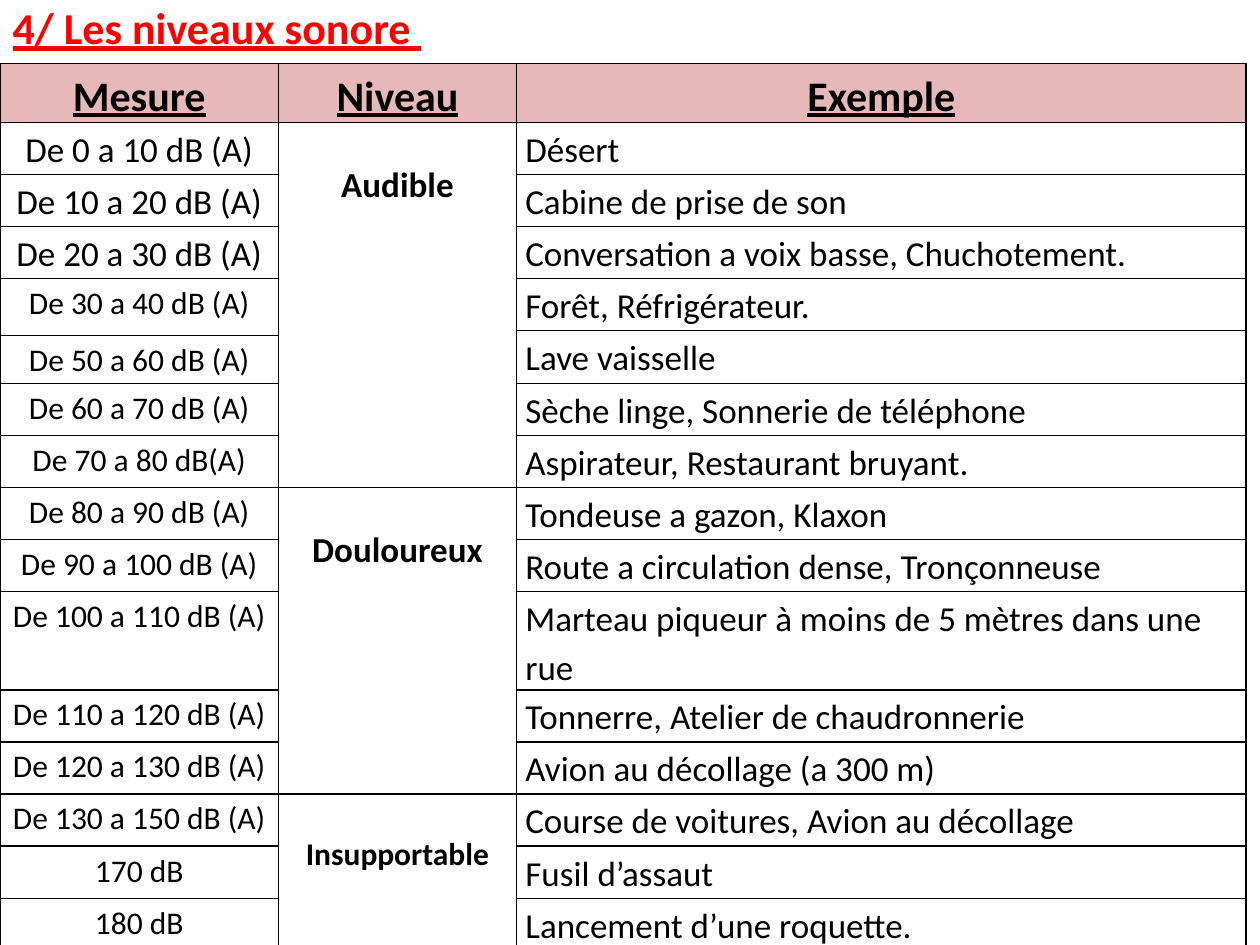
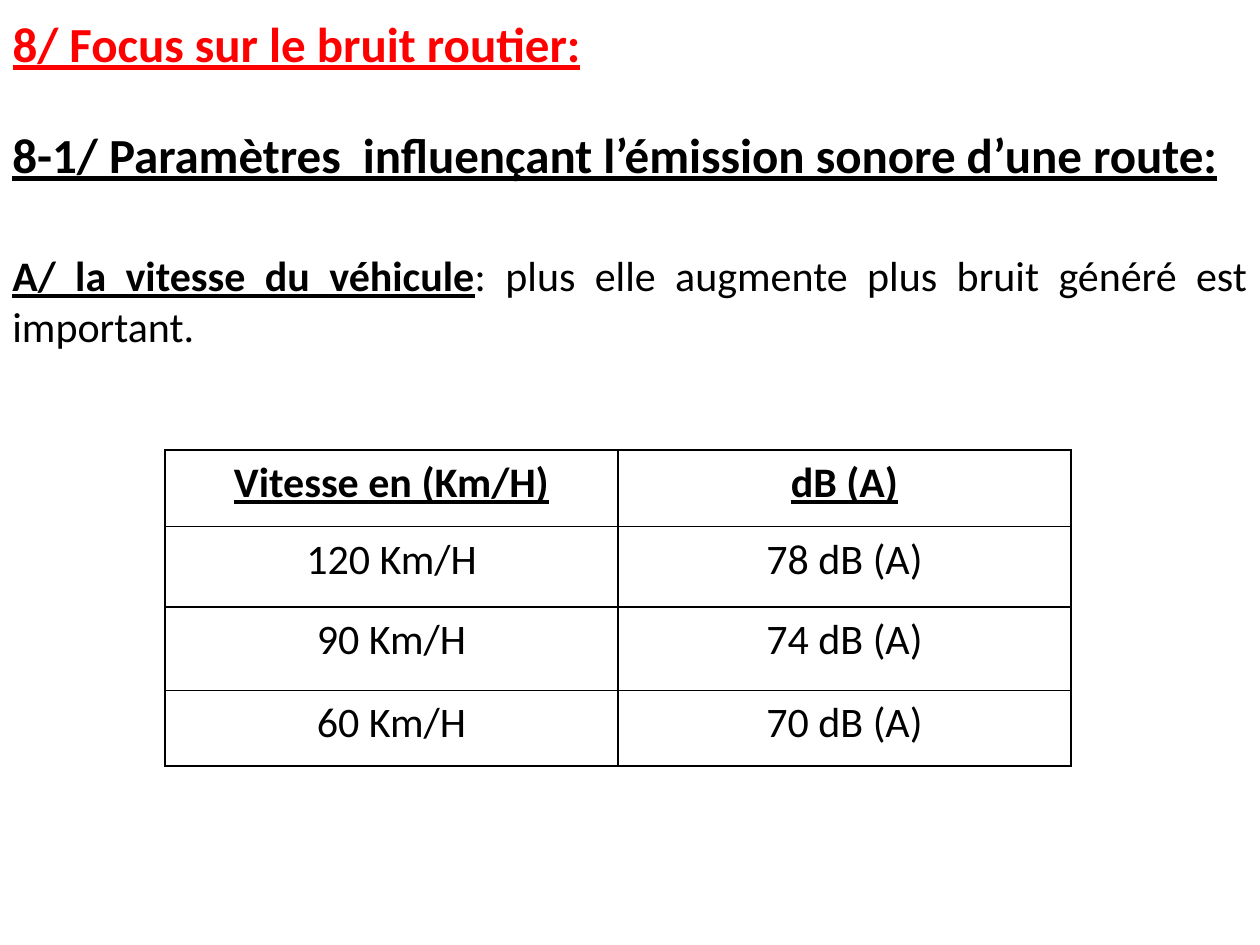
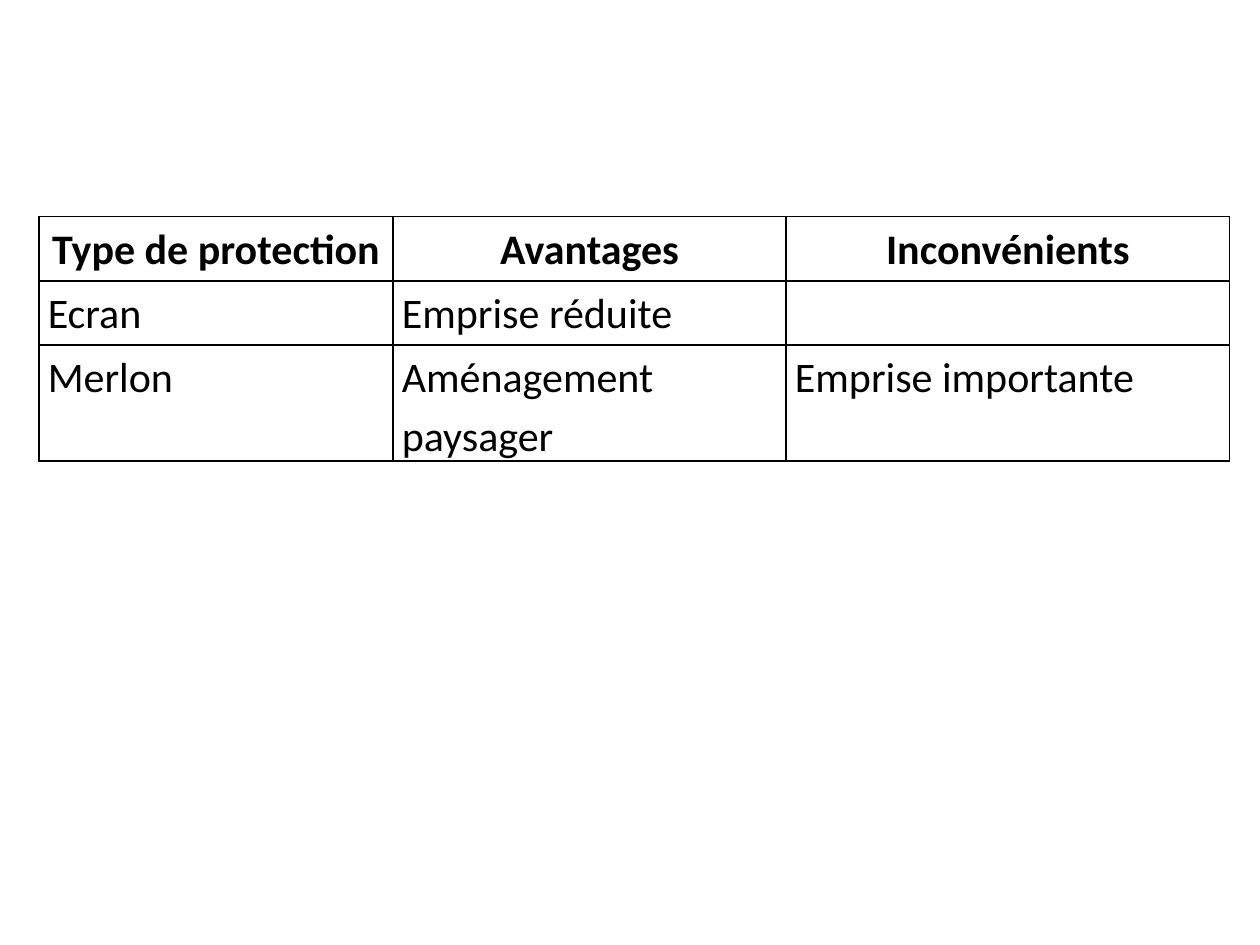
from dataclasses import dataclass, field

from lxml import etree
from pptx import Presentation
from pptx import util as u
from pptx.dml.color import RGBColor
from pptx.enum import text
from pptx.oxml.ns import qn

FONT = "Calibri"
COLORS = {"title": "FF0000", "ink": "000000", "header": "E6B9B8"}
LEFT, CENTER, JUSTIFY = text.PP_ALIGN.LEFT, text.PP_ALIGN.CENTER, text.PP_ALIGN.JUSTIFY
SLIDE_W, SLIDE_H = u.Inches(10), u.Inches(7.5)
TITLE_H = 9.07
TITLE_ONLY, BLANK = 5, 6


@dataclass(frozen=True)
class Style:
    size: float
    align: int = LEFT
    bold: bool = False
    underline: bool = False
    color: str = "ink"
    above: float = 0


@dataclass(frozen=True)
class Span:
    row: int
    col: int
    rows: int


@dataclass(frozen=True)
class Grid:
    left: float
    top: float
    cols: list[float]
    rows: list[float]
    cells: list[tuple[str, ...]]
    header: Style
    body: list[Style]
    header_fill: str | None = None
    spans: list[Span] = field(default_factory=list)
    special: dict[tuple[int, int], Style] = field(default_factory=dict)


HEADING = Style(24, CENTER, True, True)
PLAIN = Style(24)
MEASURE = Style(18, CENTER)
EXAMPLE = Style(20)
LEVEL = Style(20, CENTER, True, above=0.28)

SOUND_LEVELS = Grid(
    left=0, top=6.72,
    cols=[22.1, 18.9, 57.9],
    rows=[6.18] + [5.51] * 4 + [0.53, 5.07] + [5.51] * 10,
    cells=[
        ("Mesure", "Niveau", "Exemple"),
        ("De 0 a 10 dB (A)", "Audible", "Désert"),
        ("De 10 a 20 dB (A)", "", "Cabine de prise de son"),
        ("De 20 a 30 dB (A)", "", "Conversation a voix basse, Chuchotement."),
        ("De 30 a 40 dB (A)", "", "Forêt, Réfrigérateur."),
        ("", "", "Lave vaisselle"),
        ("De 50 a 60 dB (A)", "", ""),
        ("De 60 a 70 dB (A)", "", "Sèche linge, Sonnerie de téléphone"),
        ("De 70 a 80 dB(A)", "", "Aspirateur, Restaurant bruyant."),
        ("De 80 a 90 dB (A)", "Douloureux", "Tondeuse a gazon, Klaxon"),
        ("De 90 a 100 dB (A)", "", "Route a circulation dense, Tronçonneuse"),
        ("De 100 a 110 dB (A)", "", "Marteau piqueur à moins de 5 mètres dans une rue"),
        ("De 110 a 120 dB (A)", "", "Tonnerre, Atelier de chaudronnerie"),
        ("De 120 a 130 dB (A)", "", "Avion au décollage (a 300 m)"),
        ("De 130 a 150 dB (A)", "Insupportable", "Course de voitures, Avion au décollage"),
        ("170 dB", "", "Fusil d’assaut"),
        ("180 dB", "", "Lancement d’une roquette."),
    ],
    header=HEADING,
    body=[MEASURE, LEVEL, EXAMPLE],
    header_fill="header",
    spans=[Span(1, 1, 8), Span(9, 1, 5), Span(14, 1, 3), Span(4, 0, 2), Span(5, 2, 2)],
    special={(row, 0): Style(20, CENTER) for row in (1, 2, 3)}
    | {(14, 1): Style(18, CENTER, True, above=0.28)},
)

SPEEDS = Grid(
    left=13.1, top=47.6,
    cols=[35.95] * 2,
    rows=[8.13, 8.53, 8.8, 8],
    cells=[
        ("Vitesse en (Km/H)", "dB (A)"),
        ("120 Km/H", "78 dB (A)"),
        ("90 Km/H", "74 dB (A)"),
        ("60 Km/H", "70 dB (A)"),
    ],
    header=HEADING,
    body=[Style(24, CENTER)] * 2,
)

PROTECTIONS = Grid(
    left=3.1, top=22.93,
    cols=[28.1, 31.2, 35.2],
    rows=[6.8] * 3,
    cells=[
        ("Type de protection", "Avantages", "Inconvénients"),
        ("Ecran", "Emprise réduite", ""),
        ("Merlon", "Aménagement paysager", "Emprise importante"),
    ],
    header=Style(24, CENTER, True),
    body=[PLAIN] * 3,
)


def across(percent: float) -> int:
    return round(SLIDE_W * percent / 100)


def down(percent: float) -> int:
    return round(SLIDE_H * percent / 100)


def format_font(font, style: Style) -> None:
    font.name = FONT
    font.size = u.Pt(style.size)
    font.bold = style.bold
    font.underline = style.underline
    font.color.rgb = RGBColor.from_string(COLORS[style.color])


def write(p, content: str, style: Style) -> None:
    p.text = content
    p.alignment = style.align
    format_font(p.font, style)


def set_borders(cell) -> None:
    tc_pr = cell._tc.get_or_add_tcPr()
    for position, side in enumerate(("lnL", "lnR", "lnT", "lnB")):
        ln = etree.Element(qn(f"a:{side}"), w=str(u.Pt(1)))
        fill = etree.SubElement(ln, qn("a:solidFill"))
        etree.SubElement(fill, qn("a:srgbClr"), val=COLORS["ink"])
        tc_pr.insert(position, ln)


def format_cell(cell, content: str, style: Style, fill: str | None) -> None:
    cell.margin_left = cell.margin_right = u.Inches(0.07)
    cell.margin_top, cell.margin_bottom = u.Inches(style.above), 0
    if fill:
        cell.fill.solid()
        cell.fill.fore_color.rgb = RGBColor.from_string(COLORS[fill])
    else:
        cell.fill.background()
    set_borders(cell)
    if content:
        p = cell.text_frame.paragraphs[0]
        write(p, content, style)
        p.line_spacing = 1.15


def add_grid(s, grid: Grid) -> None:
    frame = s.shapes.add_table(
        len(grid.rows), len(grid.cols), across(grid.left), down(grid.top),
        across(sum(grid.cols)), down(sum(grid.rows)),
    )
    table = frame.table
    table.first_row = table.horz_banding = False
    for column, width in zip(table.columns, grid.cols):
        column.width = across(width)
    for row, height in zip(table.rows, grid.rows):
        row.height = down(height)
    for span in grid.spans:
        last = table.cell(span.row + span.rows - 1, span.col)
        table.cell(span.row, span.col).merge(last)
    for r, contents in enumerate(grid.cells):
        for c, content in enumerate(contents):
            base = grid.body[c] if r else grid.header
            style = grid.special.get((r, c), base)
            format_cell(table.cell(r, c), content, style, None if r else grid.header_fill)


def add_title(s, content: str, size: float, width: float, anchor) -> None:
    sp = s.shapes.title
    sp.left, sp.top, sp.width, sp.height = 0, 0, across(width), down(TITLE_H)
    tf = sp.text_frame
    tf.auto_size = text.MSO_AUTO_SIZE.NONE
    tf.vertical_anchor = anchor
    if anchor == text.MSO_ANCHOR.TOP:
        tf.margin_top = 0
    write(tf.paragraphs[0], content, Style(size, LEFT, True, True, "title"))


def add_speed_text(s) -> None:
    sp = s.shapes.add_textbox(0, down(12.53), SLIDE_W, down(28))
    tf = sp.text_frame
    tf.word_wrap = True
    write(
        tf.paragraphs[0],
        "8-1/ Paramètres  influençant l’émission sonore d’une route:",
        Style(28, LEFT, True, True),
    )
    p = tf.add_paragraph()
    p.alignment = JUSTIFY
    p.space_before = u.Pt(38)
    for content, style in (
        ("A/ la vitesse du véhicule", HEADING),
        (": plus elle augmente plus bruit généré est important.", PLAIN),
    ):
        r = p.add_run()
        r.text = content
        format_font(r.font, style)


def main() -> None:
    prs = Presentation()
    prs.slide_width, prs.slide_height = SLIDE_W, SLIDE_H
    layouts = prs.slide_layouts

    s = prs.slides.add_slide(layouts[TITLE_ONLY])
    add_title(s, "4/ Les niveaux sonore ", 25.2, 96.9, text.MSO_ANCHOR.TOP)
    add_grid(s, SOUND_LEVELS)

    s = prs.slides.add_slide(layouts[TITLE_ONLY])
    add_title(s, "8/ Focus sur le bruit routier:", 28, 85, text.MSO_ANCHOR.MIDDLE)
    add_speed_text(s)
    add_grid(s, SPEEDS)

    s = prs.slides.add_slide(layouts[BLANK])
    add_grid(s, PROTECTIONS)

    prs.save("out.pptx")


if __name__ == "__main__":
    main()
